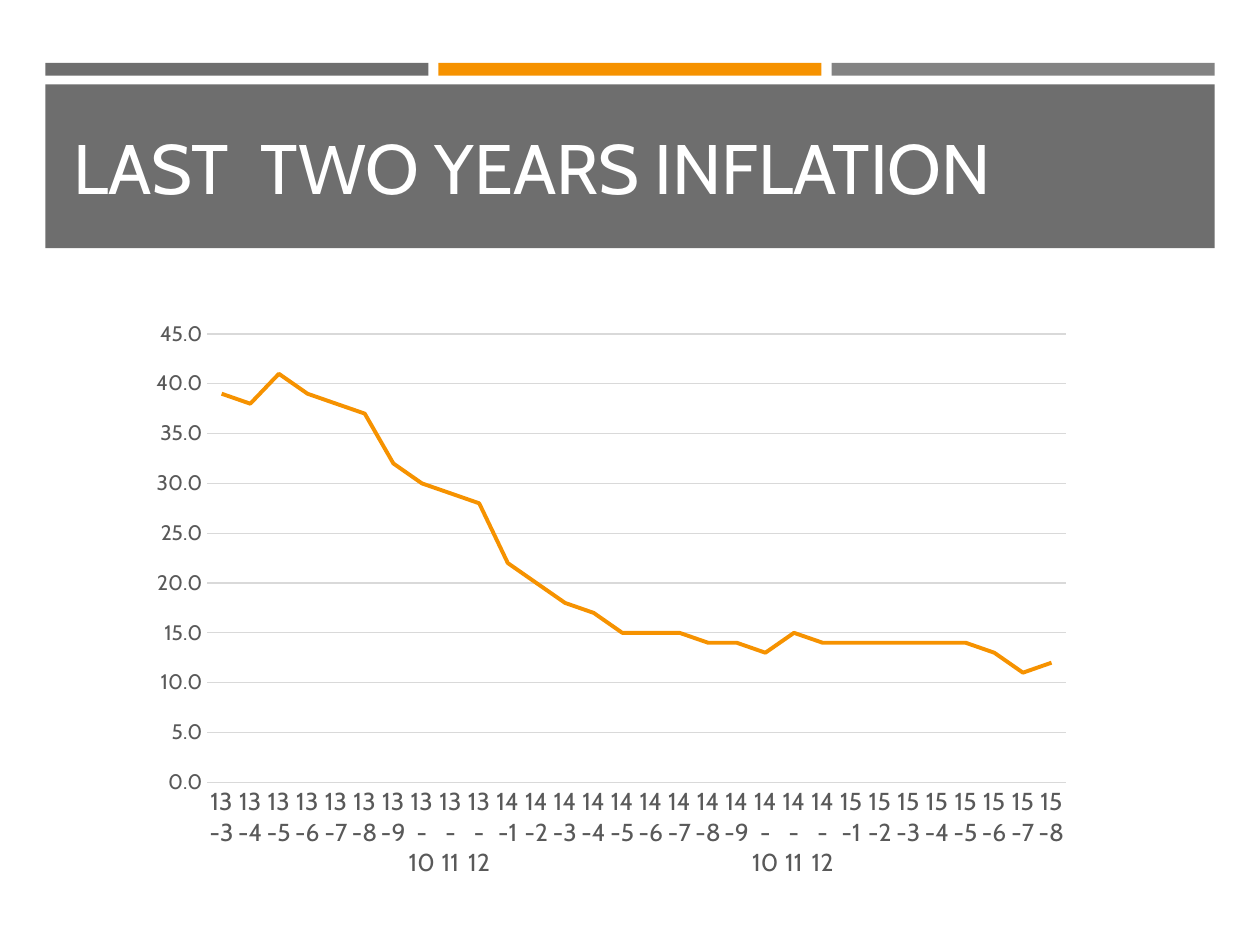
import pptx
import pptx.chart.data
import pptx.dml.color
import pptx.enum.chart
import pptx.enum.shapes
import pptx.enum.text
import pptx.util
from dataclasses import dataclass

Inches = pptx.util.Inches
Pt = pptx.util.Pt


@dataclass(frozen=True)
class Theme:
    font: str = "Cabin"
    dark: str = "6E6E6E"
    gray: str = "838383"
    accent: str = "F69200"
    white: str = "FFFFFF"
    label: str = "595959"
    grid: str = "D9D9D9"
    head: int = 40
    month: int = 14
    rate: int = 12
    base: int = 10


THEME = Theme()
RATES = (
    39, 38, 41, 39, 38, 37, 32, 30, 29, 28,
    22, 20, 18, 17, 15, 15, 15, 14, 14, 13, 15, 14,
    14, 14, 14, 14, 14, 13, 11, 12,
)
SPANS = ((13, 3, 12), (14, 1, 12), (15, 1, 8))


def rgb(code):
    return pptx.dml.color.RGBColor.from_string(code)


def style(font, size, color):
    font.name = THEME.font
    font.size = Pt(size)
    font.color.rgb = rgb(color)


def stroke(line, color, width):
    line.color.rgb = rgb(color)
    line.width = Pt(width)


def add_bar(slide, left, top, width, height, color):
    bar = slide.shapes.add_shape(
        pptx.enum.shapes.MSO_SHAPE.RECTANGLE,
        Inches(left), Inches(top), Inches(width), Inches(height))
    bar.shadow.inherit = False
    bar.fill.solid()
    bar.fill.fore_color.rgb = rgb(color)
    bar.line.fill.background()


def set_title(slide, text):
    title = slide.shapes.title
    title.left, title.top = Inches(0.48), Inches(0.77)
    title.width, title.height = Inches(9.05), Inches(1.11)
    frame = title.text_frame
    frame.text = text
    frame.word_wrap = True
    frame.vertical_anchor = pptx.enum.text.MSO_ANCHOR.MIDDLE
    para = frame.paragraphs[0]
    para.alignment = pptx.enum.text.PP_ALIGN.LEFT
    style(para.font, THEME.head, THEME.white)
    slide.shapes.element.append(title.element)


def set_axis(axis, size):
    axis.major_tick_mark = pptx.enum.chart.XL_TICK_MARK.NONE
    axis.minor_tick_mark = pptx.enum.chart.XL_TICK_MARK.NONE
    style(axis.tick_labels.font, size, THEME.label)


def add_rates(slide):
    data = pptx.chart.data.CategoryChartData(number_format="0.0")
    data.categories = [f"{year}-{month}" for year, first, last in SPANS
                       for month in range(first, last + 1)]
    data.add_series("Series 1", RATES)
    chart = slide.shapes.add_chart(
        pptx.enum.chart.XL_CHART_TYPE.LINE,
        Inches(1.09), Inches(2.46), Inches(7.52), Inches(4.6), data).chart
    chart.has_legend = False
    chart.has_title = False
    chart.font.name = THEME.font
    chart.font.size = Pt(THEME.base)

    months = chart.category_axis
    set_axis(months, THEME.month)
    stroke(months.format.line, THEME.grid, 0.75)

    scale = chart.value_axis
    set_axis(scale, THEME.rate)
    scale.minimum_scale, scale.maximum_scale = 0, 45
    scale.major_unit = 5
    scale.tick_labels.number_format = "0.0"
    scale.tick_labels.number_format_is_linked = False
    scale.format.line.fill.background()
    stroke(scale.major_gridlines.format.line, THEME.grid, 0.75)

    plot = chart.plots[0]
    plot.vary_by_categories = False
    curve = plot.series[0]
    curve.smooth = False
    curve.marker.style = pptx.enum.chart.XL_MARKER_STYLE.NONE
    stroke(curve.format.line, THEME.accent, 2.25)


def main():
    deck = pptx.Presentation()
    deck.slide_width, deck.slide_height = Inches(10), Inches(7.5)
    slide = deck.slides.add_slide(deck.slide_layouts[5])
    for index, color in enumerate((THEME.dark, THEME.accent, THEME.gray)):
        add_bar(slide, 0.36 + index * 3.12, 0.5, 3.04, 0.1, color)
    add_bar(slide, 0.36, 0.67, 9.28, 1.3, THEME.dark)
    set_title(slide, "LAST  TWO YEARS INFLATION")
    add_rates(slide)
    deck.save("out.pptx")


if __name__ == "__main__":
    main()
